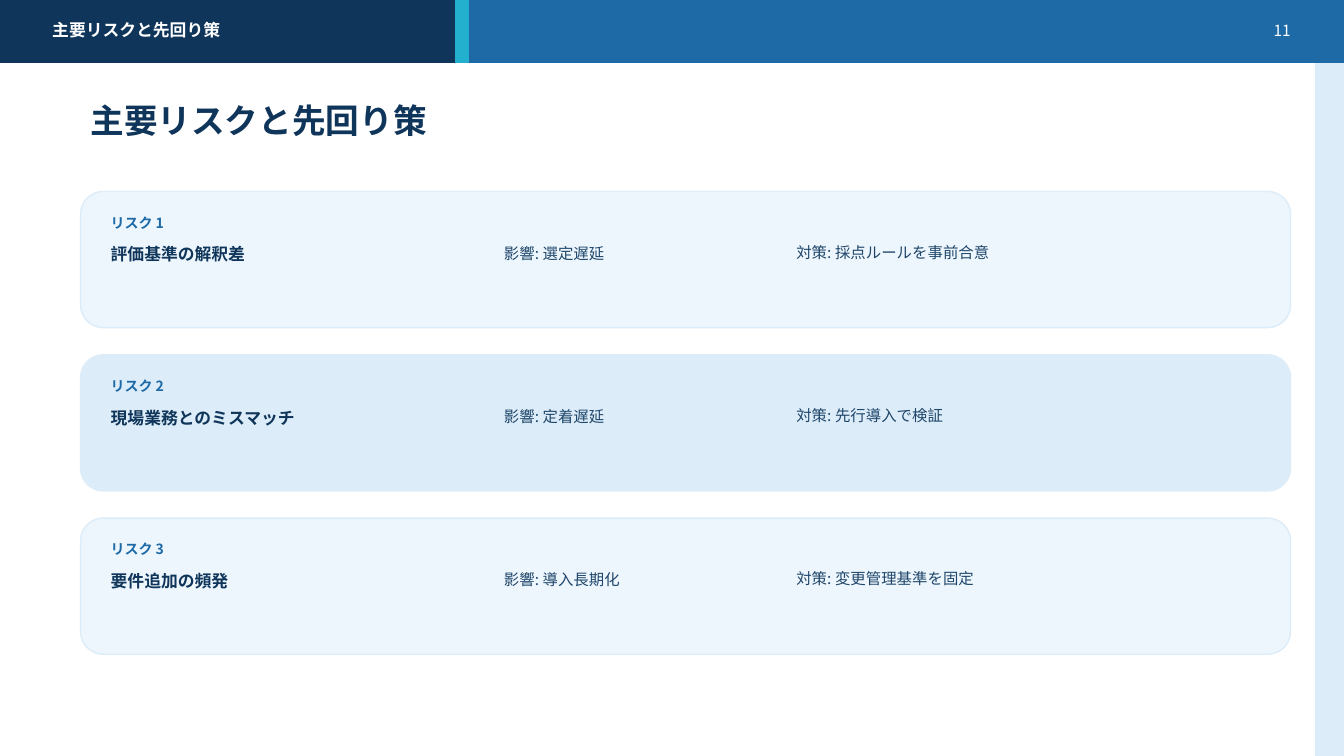
from lxml import etree
from pptx import Presentation
from pptx.dml.color import RGBColor
from pptx.enum.shapes import MSO_SHAPE
from pptx.enum.text import MSO_ANCHOR, PP_ALIGN
from pptx.oxml.ns import qn
from pptx.util import Inches, Pt

RECTANGLE, ROUNDED = MSO_SHAPE.RECTANGLE, MSO_SHAPE.ROUNDED_RECTANGLE
TOP, MIDDLE = MSO_ANCHOR.TOP, MSO_ANCHOR.MIDDLE
LEFT, RIGHT = PP_ALIGN.LEFT, PP_ALIGN.RIGHT

FONT = "Noto Sans CJK JP"
NAVY, BLUE, CYAN, SLATE = "0F355A", "1E6AA7", "23B0CF", "1F466A"
PALE, MIST, WHITE = "DCECF8", "EDF6FD", "FFFFFF"

WIDTH, HEIGHT = 13.33, 7.5
HEADER_HEIGHT = 0.62
MARGIN = 0.8
CARD_TOP, CARD_WIDTH, CARD_HEIGHT, CARD_GAP = 1.9, 12, 1.35, 0.27
LABEL_COLUMN, IMPACT_COLUMN, ACTION_COLUMN = 1, 4.9, 7.8
LABEL_ROW, DETAIL_ROW = 0.2, 0.46  # offsets from the top of a card

presentation = Presentation()
presentation.slide_width, presentation.slide_height = Inches(WIDTH), Inches(HEIGHT)
slide = presentation.slides.add_slide(presentation.slide_layouts[6])


def add_panel(kind, left, top, width, height, fill, line):
    shape = slide.shapes.add_shape(
        kind, Inches(left), Inches(top), Inches(width), Inches(height))
    shape.shadow.inherit = False
    shape.fill.solid()
    shape.fill.fore_color.rgb = RGBColor.from_string(fill)
    shape.line.color.rgb = RGBColor.from_string(line)
    shape.line.width = Pt(1)


def add_text(text, left, top, width, height, size, color,
             bold=False, align=LEFT, anchor=MIDDLE):
    box = slide.shapes.add_textbox(
        Inches(left), Inches(top), Inches(width), Inches(height))
    frame = box.text_frame
    frame.word_wrap = True
    frame.vertical_anchor = anchor
    paragraph = frame.paragraphs[0]
    paragraph.alignment = align
    run = paragraph.add_run()
    run.text = text
    run.font.size = Pt(size)
    run.font.bold = bold
    run.font.color.rgb = RGBColor.from_string(color)
    run.font.name = FONT
    east_asian = etree.SubElement(run.font._element, qn("a:ea"))
    east_asian.set("typeface", FONT)


# Side strip and header band
for left, top, width, height, color in [
    (13.05, 0.55, 0.28, HEIGHT - 0.55, PALE),
    (0, 0, WIDTH, HEADER_HEIGHT, BLUE),
    (0, 0, 4.6, HEADER_HEIGHT, NAVY),
    (4.52, 0, 0.12, HEADER_HEIGHT, CYAN),
]:
    add_panel(RECTANGLE, left, top, width, height, color, color)

title = "主要リスクと先回り策"
add_text(title, 0.42, 0.17, 8.8, 0.26, 12, WHITE, bold=True)
add_text("11", 12.15, 0.17, 0.75, 0.26, 11, WHITE, align=RIGHT)
add_text(title, MARGIN, 0.95, 11.4, 0.48, 24, NAVY, bold=True)

# Risk cards
risks = [
    ("評価基準の解釈差", "選定遅延", "採点ルールを事前合意"),
    ("現場業務とのミスマッチ", "定着遅延", "先行導入で検証"),
    ("要件追加の頻発", "導入長期化", "変更管理基準を固定"),
]
for index, (risk, impact, action) in enumerate(risks):
    top = CARD_TOP + index * (CARD_HEIGHT + CARD_GAP)
    detail_top = top + DETAIL_ROW
    fill = PALE if index % 2 else MIST
    add_panel(ROUNDED, MARGIN, top, CARD_WIDTH, CARD_HEIGHT, fill, PALE)
    add_text(f"リスク {index + 1}", LABEL_COLUMN, top + LABEL_ROW, 1.2, 0.22,
             10, BLUE, bold=True)
    add_text(risk, LABEL_COLUMN, detail_top, 3.7, 0.32, 12, NAVY, bold=True)
    add_text(f"影響: {impact}", IMPACT_COLUMN, detail_top, 2.8, 0.3, 11, SLATE)
    add_text(f"対策: {action}", ACTION_COLUMN, detail_top, 4.8, 0.58, 11, SLATE,
             anchor=TOP)

presentation.save("out.pptx")
